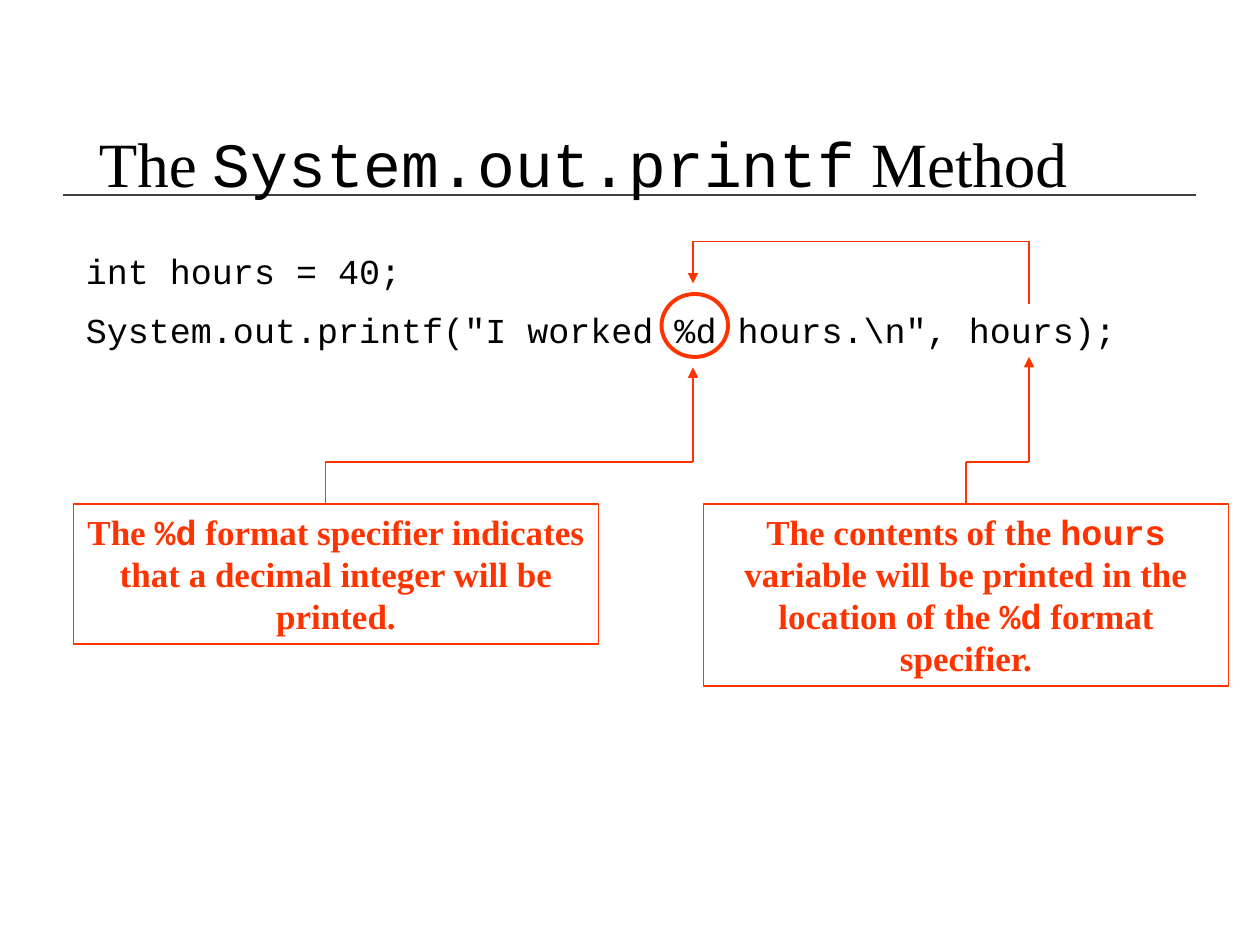
from itertools import pairwise

from lxml import etree
from pptx import Presentation
from pptx.dml.color import RGBColor
from pptx.enum.shapes import MSO_CONNECTOR, MSO_SHAPE
from pptx.enum.text import MSO_ANCHOR, PP_ALIGN
from pptx.oxml.ns import qn
from pptx.util import Pt

STRAIGHT = MSO_CONNECTOR.STRAIGHT
RECT, OVAL = MSO_SHAPE.RECTANGLE, MSO_SHAPE.OVAL
LEFT, CENTER = PP_ALIGN.LEFT, PP_ALIGN.CENTER
TOP, MIDDLE = MSO_ANCHOR.TOP, MSO_ANCHOR.MIDDLE
SERIF, MONO = "Times New Roman", "Courier New"
BLACK, GRAY, RED = "000000", "404040", "FF3300"


def rgb(value):
    return RGBColor.from_string(value)


def write(sp, paragraphs, size, color=BLACK, bold=False, align=LEFT,
          anchor=TOP, spacing=None, line_spacing=None):
    tf = sp.text_frame
    tf.word_wrap = True
    tf.vertical_anchor = anchor
    for i, runs in enumerate(paragraphs):
        p = tf.add_paragraph() if i else tf.paragraphs[0]
        formats = {"alignment": align, "space_before": spacing,
                   "space_after": spacing, "line_spacing": line_spacing}
        for name, value in formats.items():
            setattr(p, name, value)
        for text, font in runs:
            r = p.add_run()
            r.text = text
            for name, value in {"name": font, "size": Pt(size), "bold": bold}.items():
                setattr(r.font, name, value)
            r.font.color.rgb = rgb(color)


def add_text(s, x, y, w, h, paragraphs, size, **formats):
    sp = s.shapes.add_textbox(Pt(x), Pt(y), Pt(w), Pt(h))
    write(sp, paragraphs, size, **formats)


def add_outline(s, kind, x, y, w, h, width):
    sp = s.shapes.add_shape(kind, Pt(x), Pt(y), Pt(w), Pt(h))
    sp.shadow.inherit = False
    sp.fill.background()
    sp.line.color.rgb = rgb(RED)
    sp.line.width = Pt(width)
    return sp


def add_callout(s, x, h, runs):
    sp = add_outline(s, RECT, x, 288, 300, h, 0.75)
    write(sp, [runs], 20, color=RED, bold=True, align=CENTER)
    return sp


def add_line(s, start, end, color, width, arrow=False):
    c = s.shapes.add_connector(STRAIGHT, *(Pt(v) for v in start + end))
    c.line.color.rgb = rgb(color)
    c.line.width = Pt(width)
    if arrow:
        etree.SubElement(c.line._get_or_add_ln(), qn("a:tailEnd"), type="triangle")
    etree.SubElement(c._element.spPr, qn("a:effectLst"))
    return c


def add_arrow_route(s, points):
    return [add_line(s, a, b, RED, 0.75, arrow=b == points[-1])
            for a, b in pairwise(points)]


def main():
    prs = Presentation()
    prs.slide_width, prs.slide_height = Pt(720), Pt(540)
    s = prs.slides.add_slide(prs.slide_layouts[6])

    add_line(s, (36, 111.6), (683.3, 111.6), GRAY, 1)
    add_text(s, 49.5, 29, 621, 133,
             [[("The ", SERIF), ("System.out.printf", MONO), (" Method", SERIF)]],
             36, anchor=MIDDLE, line_spacing=0.9)
    add_text(s, 42, 139, 654, 70,
             [[("int hours = 40;", MONO)],
              [('System.out.printf("I worked %d hours.\\n", hours);', MONO)]],
             20, spacing=Pt(4.8))
    add_outline(s, OVAL, 378, 168, 38, 36, 2.25)

    add_callout(s, 42, 80, [
        ("The ", SERIF), ("%d", MONO),
        (" format specifier indicates that a decimal integer will be printed.", SERIF)])
    contents = add_callout(s, 402, 104, [
        ("The contents of the ", SERIF), ("hours", MONO),
        (" variable will be printed in the location of the ", SERIF),
        ("%d", MONO), (" format specifier.", SERIF)])

    add_arrow_route(s, [(588, 174), (588, 138), (396, 138), (396, 162)])
    add_arrow_route(s, [(186, 288), (186, 264), (396, 264), (396, 210)])
    route = add_arrow_route(s, [(552, 288), (552, 264), (588, 264), (588, 204)])
    route[0].begin_connect(contents, 0)

    prs.save("out.pptx")


if __name__ == "__main__":
    main()
